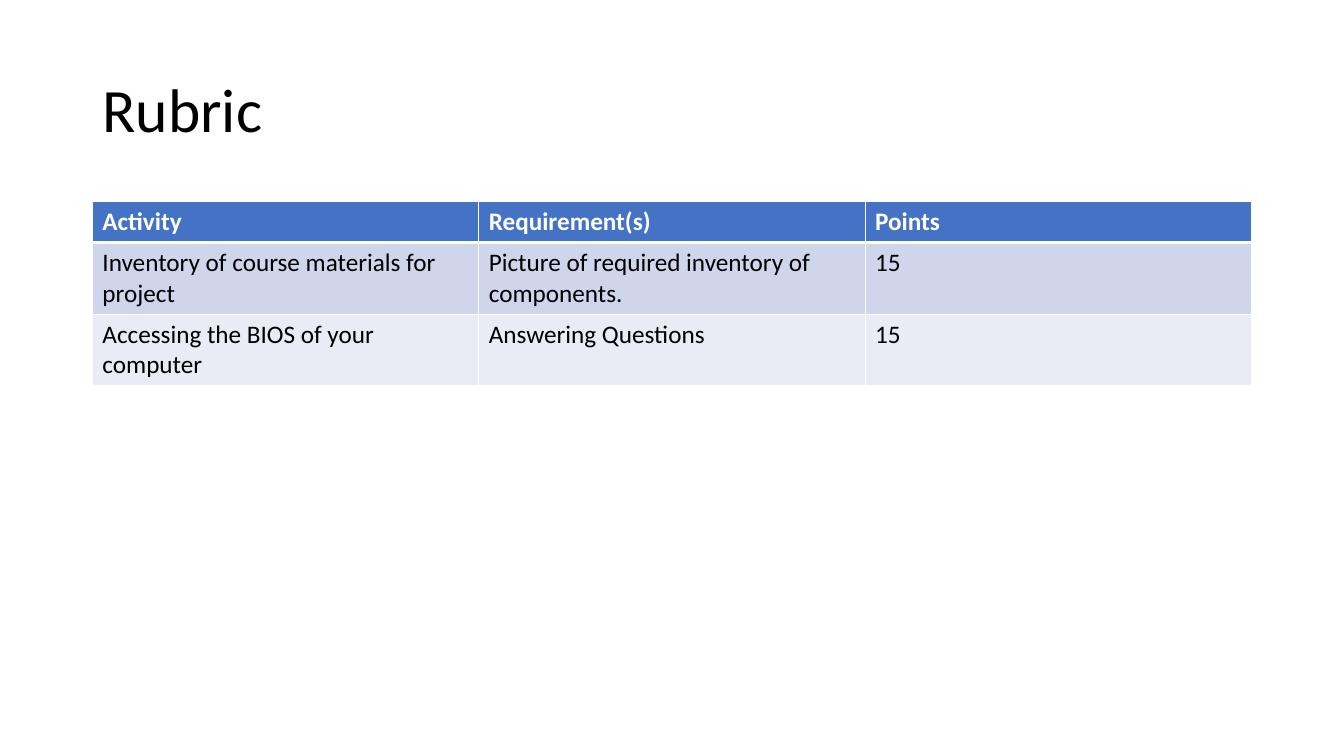
from lxml.etree import SubElement
from pptx import Presentation
from pptx.dml.color import RGBColor
from pptx.enum.text import MSO_ANCHOR, MSO_AUTO_SIZE, PP_ALIGN
from pptx.oxml.ns import qn
from pptx.util import Emu, Pt

EMU_PER_PX = 9525
FONT = "Calibri"
BLACK = "000000"
WHITE = "FFFFFF"
HEADER_BLUE = "4472C4"
BAND_FILLS = ["CFD5EA", "E9EBF5"]
MARGIN = 88
CONTENT_WIDTH = 1104
ROW_HEIGHT = 39
RUBRIC = [
    ["Activity", "Requirement(s)", "Points"],
    ["Inventory of course materials for project",
     "Picture of required inventory of components.", "15"],
    ["Accessing the BIOS of your computer", "Answering Questions", "15"],
]


def px(length):
    return Emu(length * EMU_PER_PX)


def color(hex_value):
    return RGBColor.from_string(hex_value)


def add_run(paragraph, text, size, hex_value, bold=False):
    run = paragraph.add_run()
    run.text = text
    run.font.name = FONT
    run.font.size = Pt(size)
    run.font.bold = bold
    run.font.color.rgb = color(hex_value)


def add_title(slide, text):
    title = slide.shapes.title
    title.left, title.top = px(MARGIN), px(38)
    title.width, title.height = px(CONTENT_WIDTH), px(139)
    frame = title.text_frame
    frame.word_wrap = True
    frame.auto_size = MSO_AUTO_SIZE.NONE
    frame.vertical_anchor = MSO_ANCHOR.MIDDLE
    heading = frame.paragraphs[0]
    heading.alignment = PP_ALIGN.LEFT
    heading.line_spacing = 0.9
    add_run(heading, text, 44, BLACK)


def set_borders(cell, top, bottom):
    properties = cell._tc.get_or_add_tcPr()
    for side, width in [("L", 1), ("R", 1), ("T", top), ("B", bottom)]:
        border = SubElement(properties, qn(f"a:ln{side}"), w=str(Pt(width)))
        fill = SubElement(border, qn("a:solidFill"))
        SubElement(fill, qn("a:srgbClr"), val=WHITE)


def format_cell(cell, text, row_index):
    is_header = row_index == 0
    set_borders(cell, top=3 if row_index == 1 else 1, bottom=3 if is_header else 1)
    cell.fill.solid()
    band = BAND_FILLS[(row_index - 1) % len(BAND_FILLS)]
    cell.fill.fore_color.rgb = color(HEADER_BLUE if is_header else band)
    add_run(cell.text_frame.paragraphs[0], text, 18,
            WHITE if is_header else BLACK, is_header)


def add_rubric(slide, rows):
    rubric = slide.shapes.add_table(
        len(rows), len(rows[0]), px(MARGIN), px(192),
        px(CONTENT_WIDTH), px(ROW_HEIGHT * len(rows))).table
    for row_index, row in enumerate(rows):
        for column_index, text in enumerate(row):
            format_cell(rubric.cell(row_index, column_index), text, row_index)


def main():
    deck = Presentation()
    deck.slide_width, deck.slide_height = px(1280), px(720)
    slide = deck.slides.add_slide(deck.slide_layouts.get_by_name("Title Only"))
    add_title(slide, "Rubric")
    add_rubric(slide, RUBRIC)
    deck.save("out.pptx")


if __name__ == "__main__":
    main()
